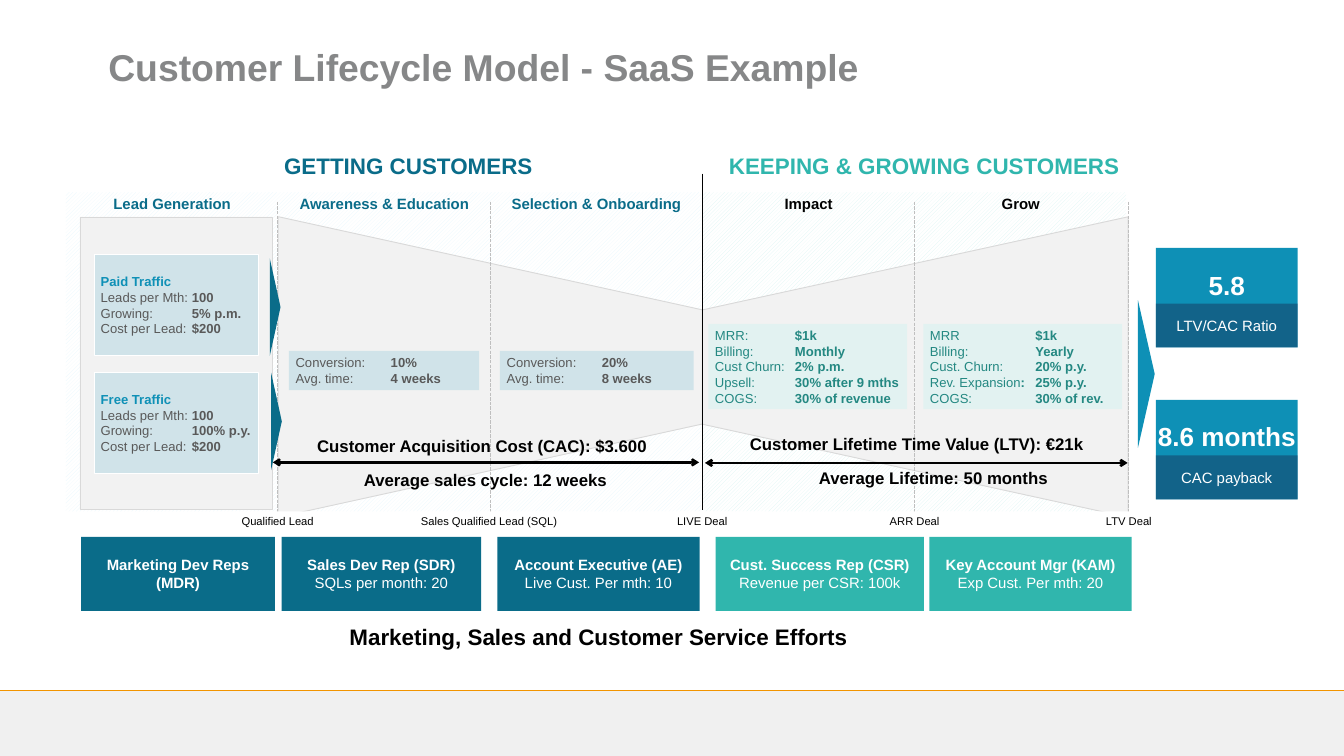
from lxml import etree
from pptx import Presentation
from pptx.dml.color import RGBColor
from pptx.enum.dml import MSO_LINE, MSO_PATTERN
from pptx.enum.shapes import MSO_CONNECTOR, MSO_SHAPE
from pptx.enum.text import MSO_ANCHOR, PP_ALIGN
from pptx.oxml.ns import qn
from pptx.util import Pt

BLUE, TEAL, SKY = "0A6C89", "30B6AD", "0E90B6"
BLACK, WHITE, GREY = "000000", "FFFFFF", "595959"
PALE, PANEL, EDGE = "D0E3E9", "F2F2F2", "D9D9D9"
rgb = RGBColor.from_string

prs = Presentation()
prs.slide_width, prs.slide_height = Pt(1440), Pt(810)
s = prs.slides.add_slide(prs.slide_layouts[6])


def box(x, y, w, h, fill=None, line=None, kind=MSO_SHAPE.RECTANGLE, alpha=None, rotation=0):
    """Add a filled shape, or a text box when there is no fill."""
    frame = [Pt(v) for v in (x, y, w, h)]
    if fill is None:
        return s.shapes.add_textbox(*frame)
    sp = s.shapes.add_shape(kind, *frame)
    sp.shadow.inherit = False
    sp.rotation = rotation
    sp.fill.solid()
    sp.fill.fore_color.rgb = rgb(fill)
    if alpha:
        clr = sp.fill._xPr.find(qn("a:solidFill"))[0]
        etree.SubElement(clr, qn("a:alpha"), val=str(alpha * 1000))
    if line:
        sp.line.color.rgb = rgb(line)
        sp.line.width = Pt(1)
    else:
        sp.line.fill.background()
    return sp


def write(sp, lines, size, color, align=PP_ALIGN.CENTER, anchor=MSO_ANCHOR.TOP, tab=None):
    """Write one paragraph per line; the part after "|" is bold."""
    tf = sp.text_frame
    tf.word_wrap = True
    tf.vertical_anchor = anchor
    for i, text in enumerate(lines):
        p = tf.add_paragraph() if i else tf.paragraphs[0]
        p.alignment = align
        if tab:
            tabs = etree.SubElement(p._p.get_or_add_pPr(), qn("a:tabLst"))
            etree.SubElement(tabs, qn("a:tab"), pos=str(Pt(tab)), algn="l")
        plain, _, strong = text.partition("|")
        for part, bold in ((plain, False), (strong, True)):
            if part:
                r = p.add_run()
                r.text = part
                fmt = {"name": "Arial", "size": Pt(size), "bold": bold}
                for key, value in fmt.items():
                    setattr(r.font, key, value)
                r.font.color.rgb = rgb(color)
    return tf


# Footer band
box(0, 739.5, 1440, 70.5, "F0F0F0")

# Hatched backgrounds
for x, w, color in ((70.5, 680.5, "E7F7FD"), (753, 453.5, "DBF5F3")):
    sp = box(x, 206, w, 342, WHITE)
    sp.fill.patterned()
    sp.fill.pattern = MSO_PATTERN.WIDE_UPWARD_DIAGONAL
    sp.fill.fore_color.rgb = rgb(color)
    sp.fill.back_color.rgb = rgb(WHITE)

# Funnel halves and lead panel
for x, y, h, turn in ((819.5, 165, 456.5, 270), (364.3, 166, 454.3, 90)):
    sp = box(x, y, 322, h, PANEL, EDGE, MSO_SHAPE.TRAPEZOID, rotation=turn)
    sp.adjustments[0] = 0.31
box(85.7, 232.5, 206, 313.3, PANEL, EDGE)

# Lines: footer rule, stage dividers, centre divider, double arrows
lines = [(0, 739.5, 1440, 739.5, "F29400", 0.5, None)]
lines += [(x, 216, x, 569.5, "BFBFBF", 1.25, "dash") for x in (297.5, 525.5, 980, 1209.5)]
lines += [
    (752.4, 186, 752.4, 546, BLACK, 1.25, None),
    (292.3, 495.4, 749, 495.4, BLACK, 2.5, "arrow"),
    (755.3, 496, 1208.2, 496, BLACK, 2.5, "arrow"),
]
for x1, y1, x2, y2, color, width, style in lines:
    c = s.shapes.add_connector(MSO_CONNECTOR.STRAIGHT, Pt(x1), Pt(y1), Pt(x2), Pt(y2))
    c.line.color.rgb = rgb(color)
    c.line.width = Pt(width)
    if style == "dash":
        c.line.dash_style = MSO_LINE.SQUARE_DOT
    elif style == "arrow":
        ln = c.line._get_or_add_ln()
        for end in ("a:headEnd", "a:tailEnd"):
            etree.SubElement(ln, qn(end), type="arrow")
    etree.SubElement(c._element.spPr, qn("a:effectLst"))

# Title
write(box(109, 32.4, 1097, 78.5), ["|Customer Lifecycle Model - SaaS Example"], 40, "868788",
      PP_ALIGN.LEFT, MSO_ANCHOR.MIDDLE)

# Section headings and captions
for x, y, w, h, text, size, color in (
    (121.7, 159, 631.5, 36, "GETTING CUSTOMERS", 24, BLUE),
    (755.3, 159, 469.5, 36, "KEEPING & GROWING CUSTOMERS", 24, TEAL),
    (70.5, 664.5, 1141.2, 36, "Marketing, Sales and Customer Service Efforts", 24, BLACK),
    (329, 463, 375, 29, "Customer Acquisition Cost (CAC): $3.600", 18, BLACK),
    (780.5, 461, 403.2, 29, "Customer Lifetime Time Value (LTV): €21k", 18, BLACK),
    (370, 499.5, 300, 29, "Average sales cycle: 12 weeks", 18, BLACK),
    (850, 497.5, 300, 29, "Average Lifetime: 50 months", 18, BLACK),
):
    write(box(x, y, w, h), ["|" + text], size, color)

# Stage headings
stages = ("Lead Generation", "Awareness & Education", "Selection & Onboarding", "Impact", "Grow")
for i, text in enumerate(stages):
    write(box(71 + 227.3 * i, 205.2, 227, 26.6), ["|" + text], 16, BLUE if i < 3 else BLACK)

# Milestones below the dividers
for x, w, text in (
    (297.5, 134, "Qualified Lead"),
    (524, 203, "Sales Qualified Lead (SQL)"),
    (752.4, 134, "LIVE Deal"),
    (980, 152, "ARR Deal"),
    (1209.5, 78.5, "LTV Deal"),
):
    write(box(x - w / 2, 548, w, 21.8, WHITE), [text], 12, BLACK)

# Lead source cards
for y, head, growth in ((273, "Paid Traffic", "5% p.m."), (399, "Free Traffic", "100% p.y.")):
    rows = ["|" + head, "Leads per Mth:|\t100", f"Growing:|\t{growth}", "Cost per Lead:|\t$200"]
    tf = write(box(100.8, y, 176.4, 108, PALE, WHITE), rows, 14, GREY,
               PP_ALIGN.LEFT, MSO_ANCHOR.MIDDLE, 97.7)
    tf.paragraphs[0].runs[0].font.color.rgb = rgb(SKY)

# Metric cards
for x, y, w, h, fill, alpha, color, tab, rows in (
    (309.6, 376, 203.8, 42, PALE, None, GREY, 102, ["Conversion:|\t10%", "Avg. time:|\t4 weeks"]),
    (535.7, 376, 207.4, 42, PALE, None, GREY, 102, ["Conversion:|\t20%", "Avg. time:|\t8 weeks"]),
    (759, 347, 213, 91.5, "D3F3F1", 50, "248882", 85.7,
     ["MRR:|\t$1k", "Billing:|\tMonthly", "Cust Churn:|\t2% p.m.",
      "Upsell:|\t30% after 9 mths", "COGS:|\t30% of revenue"]),
    (989.3, 347, 213, 91.5, "D3F3F1", 50, "248882", 113,
     ["MRR|\t$1k", "Billing:|\tYearly", "Cust. Churn:|\t20% p.y.",
      "Rev. Expansion|:\t25% p.y.", "COGS:|\t30% of rev."]),
):
    write(box(x, y, w, h, fill, alpha=alpha), rows, 14, color,
          PP_ALIGN.LEFT, MSO_ANCHOR.MIDDLE, tab)

# Flow triangles
for x, y, w, h, color in (
    (242.6, 323.3, 104.4, 11.5, BLUE),
    (244, 445.7, 104.4, 11.5, BLUE),
    (1149, 391.7, 158.4, 18, SKY),
):
    box(x, y, w, h, color, kind=MSO_SHAPE.ISOSCELES_TRIANGLE, rotation=90)

# Key figures
for y, value, caption in ((265.7, "5.8", "LTV/CAC Ratio"), (428.4, "8.6 months", "CAC payback")):
    box(1238.4, y, 152, 106.6, SKY)
    box(1238.4, y + 59.6, 152, 47, "17375E", alpha=50)
    tf = write(box(1220.4, y + 19, 188, 41), ["|" + value], 28, WHITE)
    effects = etree.Element(qn("a:effectLst"))
    shadow = etree.SubElement(effects, qn("a:outerShdw"), blurRad="38100", dist="38100", dir="2700000")
    clr = etree.SubElement(shadow, qn("a:srgbClr"), val=BLACK)
    etree.SubElement(clr, qn("a:alpha"), val="43000")
    tf.paragraphs[0].runs[0]._r.rPr.find(qn("a:solidFill")).addnext(effects)
    write(box(1238.4, y + 70.5, 152, 26.6), [caption], 16, WHITE)

# Team roles
for x, w, color, rows in (
    (87, 207.4, BLUE, ["|Marketing Dev Reps (MDR)"]),
    (301.7, 213.8, BLUE, ["|Sales Dev Rep (SDR)", "SQLs per month: 20"]),
    (532.8, 216.7, BLUE, ["|Account Executive (AE)", "Live Cust. Per mth: 10"]),
    (766.8, 223.2, TEAL, ["|Cust. Success Rep (CSR)", "Revenue per CSR: 100k"]),
    (995.8, 216.7, TEAL, ["|Key Account Mgr (KAM)", "Exp Cust. Per mth: 20"]),
):
    write(box(x, 575.3, w, 79.2, color), rows, 16, WHITE, anchor=MSO_ANCHOR.MIDDLE)

prs.save("out.pptx")
